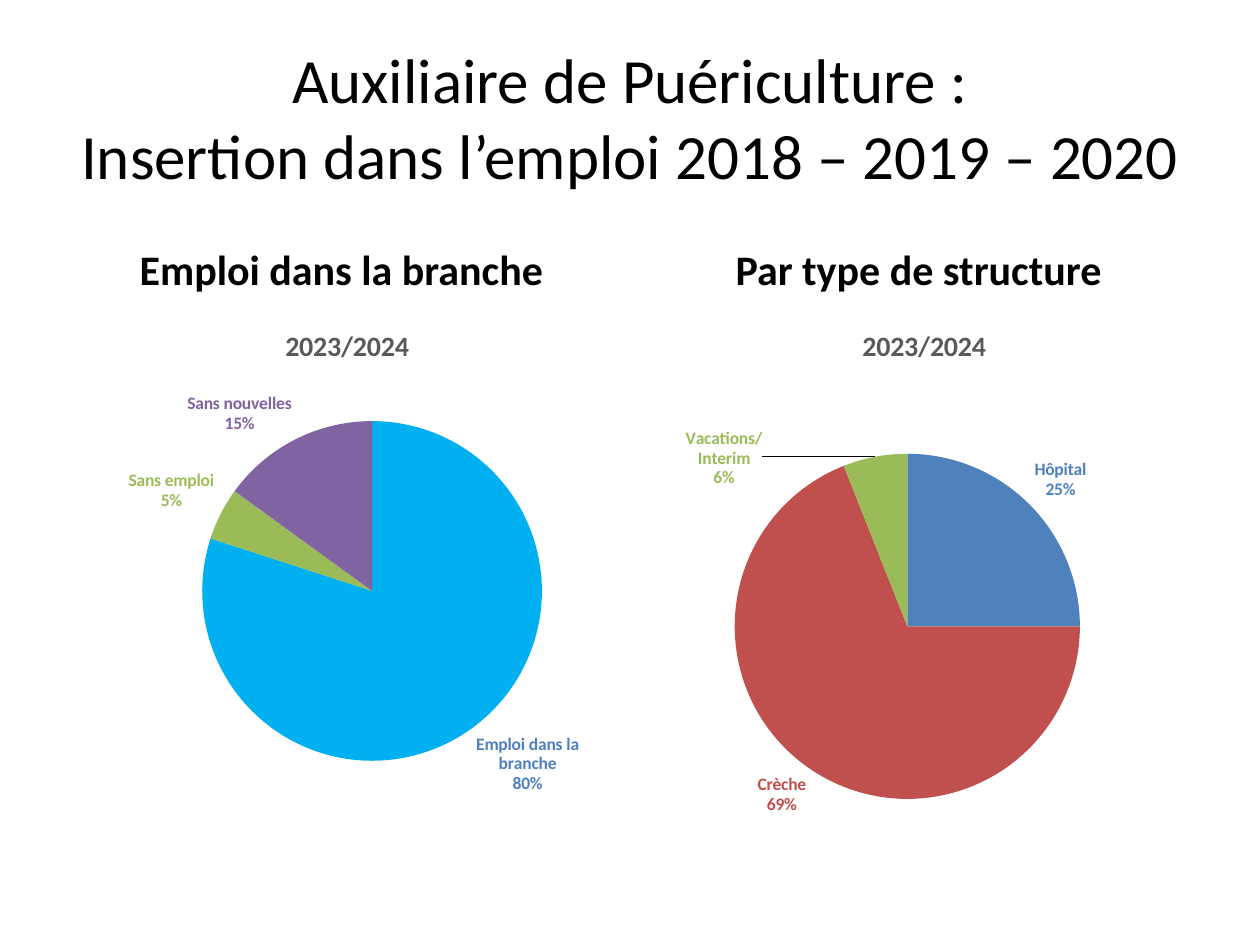
"""Build the slide on job placement of childcare assistants, with two pie charts."""
from lxml.etree import SubElement
from pptx import Presentation
from pptx.chart.data import CategoryChartData
from pptx.dml.color import RGBColor
from pptx.enum.chart import XL_CHART_TYPE as CT, XL_LABEL_POSITION as LP
from pptx.enum.text import MSO_ANCHOR as MA, PP_ALIGN as PA
from pptx.oxml.ns import qn
from pptx.util import Inches, Pt

BLACK = RGBColor(0, 0, 0)
GREY = RGBColor(0x59, 0x59, 0x59)
SKY = RGBColor(0, 0xB0, 0xF0)
BLUE = RGBColor(0x4F, 0x81, 0xBD)
RED = RGBColor(0xC0, 0x50, 0x4D)
GREEN = RGBColor(0x9B, 0xBB, 0x59)
PURPLE = RGBColor(0x80, 0x64, 0xA2)
FONT = "Calibri"

TITLE = ["Auxiliaire de Puériculture :", "Insertion dans l’emploi 2018 – 2019 – 2020"]
PERIOD = "2023/2024"
PANELS = [
    {"heading": "Emploi dans la branche",
     "plot": (0.25, 0.22, 0.61, 0.63),
     "slices": [("Emploi dans la branche", 80, SKY, BLUE, None),
                ("Congé Mat./autre", 0, RED, RED, None),
                ("Sans emploi", 5, GREEN, GREEN, None),
                ("Sans nouvelles", 15, PURPLE, PURPLE, None)]},
    {"heading": "Par type de structure",
     "plot": (0.17, 0.28, 0.62, 0.64),
     "slices": [("Hôpital", 25, BLUE, BLUE, None),
                ("Crèche", 69, RED, RED, None),
                ("Vacations/Interim", 6, GREEN, GREEN, (-0.2, 0.07))]},
]
WIDTH, HEIGHT = 10, 7.5
MARGIN, GAP = 0.5, 0.16
COL_W = (WIDTH - 2 * MARGIN - GAP) / 2
HEAD_TOP, HEAD_H, CHART_H = 1.68, 0.7, 4.32


def style(font, size, color, bold=False):
    font.name, font.size, font.bold = FONT, Pt(size), bold
    font.color.rgb = color


def add_text(slide, box, lines, size, anchor, bold=False):
    tf = slide.shapes.add_textbox(*map(Inches, box)).text_frame
    tf.word_wrap, tf.vertical_anchor = True, anchor
    p = tf.paragraphs[0]
    p.alignment = PA.CENTER
    for i, line in enumerate(lines):
        if i:
            p.add_line_break()
        r = p.add_run()
        r.text = line
        style(r.font, size, BLACK, bold)


def set_layout(parent, index, values, inner=False):
    for old in parent.findall(qn("c:layout")):
        parent.remove(old)
    layout = SubElement(parent, qn("c:layout"))
    parent.insert(index, layout)
    manual = SubElement(layout, qn("c:manualLayout"))
    settings = [("layoutTarget", "inner")] if inner else []
    if inner or parent.tag == qn("c:title"):
        settings += [("xMode", "edge"), ("yMode", "edge")]
    settings += zip("xywh", values)
    for name, value in settings:
        SubElement(manual, qn(f"c:{name}")).set("val", str(value))


def label_point(point, color, offset):
    label = point.data_label
    style(label.font, 10, color, True)
    label.position = LP.OUTSIDE_END
    element = label.font._element if hasattr(label.font, "_element") else None
    return element, offset


def add_pie(slide, box, panel):
    names, values, fills, inks, offsets = zip(*panel["slices"])
    data = CategoryChartData(number_format="#,##0")
    data.categories = names
    data.add_series("Series 1", values)
    chart = slide.shapes.add_chart(CT.PIE, *map(Inches, box), data).chart
    style(chart.font, 10, BLACK)
    chart.has_legend = False
    tf = chart.chart_title.text_frame
    r = tf.paragraphs[0].add_run()
    r.text = PERIOD
    style(r.font, 16, GREY, True)
    set_layout(chart.chart_title._element, 1, (0.39, 0.04))
    plot = chart.plots[0]
    plot.vary_by_categories = True
    plot_area = chart._chartSpace.chart.plotArea
    set_layout(plot_area, 0, panel["plot"], inner=True)
    series = plot.series[0]
    labels = series.data_labels
    labels.show_value = False
    labels.show_category_name = labels.show_percentage = True
    labels.number_format, labels.number_format_is_linked = "0%", False
    labels.position = LP.OUTSIDE_END
    for i, (value, fill, ink) in enumerate(zip(values, fills, inks)):
        point = series.points[i]
        point.format.fill.solid()
        point.format.fill.fore_color.rgb = fill
        style(point.data_label.font, 10, ink, True)
        point.data_label.position = LP.OUTSIDE_END
    for i, item in enumerate(labels._element.findall(qn("c:dLbl"))):
        if not values[i]:
            for child in list(item)[1:]:
                item.remove(child)
            SubElement(item, qn("c:delete")).set("val", "1")
            continue
        for name, shown in (("showVal", "0"), ("showCatName", "1"), ("showPercent", "1")):
            item.find(qn(f"c:{name}")).set("val", shown)
        SubElement(item, qn("c:separator")).text = "\n"
        if offsets[i]:
            set_layout(item, 1, offsets[i])


def main():
    prs = Presentation()
    prs.slide_width, prs.slide_height = Inches(WIDTH), Inches(HEIGHT)
    slide = prs.slides.add_slide(prs.slide_layouts[6])
    add_text(slide, (0.12, 0.3, 9.76, 1.25), TITLE, 36, MA.MIDDLE)
    for col, panel in enumerate(PANELS):
        left = MARGIN + col * (COL_W + GAP)
        add_text(slide, (left, HEAD_TOP, COL_W, HEAD_H), [panel["heading"]], 24, MA.BOTTOM, True)
        add_pie(slide, (left, HEAD_TOP + HEAD_H, COL_W, CHART_H), panel)
    prs.save("out.pptx")


if __name__ == "__main__":
    main()
